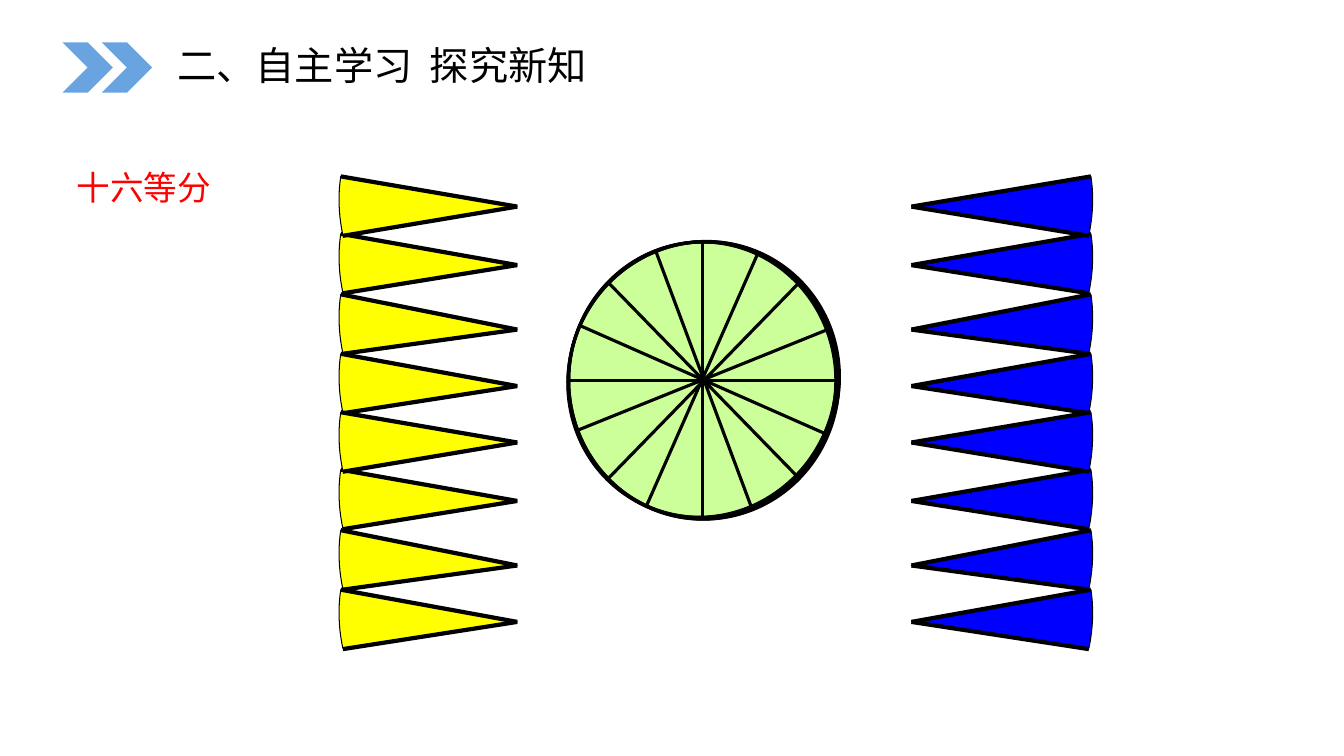
from lxml import etree
from pptx import Presentation
from pptx import util as u
from pptx.dml.color import RGBColor
from pptx.enum import shapes, text
from pptx.oxml.ns import qn

BLACK = RGBColor(0, 0, 0)
RED = RGBColor(0xFF, 0, 0)
YELLOW = RGBColor(0xFF, 0xFF, 0)
BLUE = RGBColor(0, 0, 0xFF)
GREEN = RGBColor(0xCC, 0xFF, 0x99)
SKY = RGBColor(0x69, 0xA4, 0xE1)

SECTOR_H = 0.58
HALF_H = 2.34  # four sectors
# Top of each sector within half a column, and its tip's depth below that top
SECTORS = [(0, 0.3), (0.57, 0.31), (1.17, 0.35), (1.76, 0.32)]
# Rim curve: outward offsets of its four Bezier points
RIM = (0, 0.03, 0.02, -0.02)
ARC_STEPS = 10


def paint(sp, fill=None, line=None, width=0.75):
    sp.shadow.inherit = False
    if fill is None:
        sp.fill.background()
    else:
        sp.fill.solid()
        sp.fill.fore_color.rgb = fill
    if line is None:
        sp.line.fill.background()
    else:
        sp.line.color.rgb = line
        sp.line.width = u.Pt(width)


def add_preset(parent, kind, x, y, w, h, **style):
    sp = parent.shapes.add_shape(kind, *map(u.Inches, (x, y, w, h)))
    paint(sp, **style)
    return sp


def set_text(sp, words, size, colour):
    tf = sp.text_frame
    tf.word_wrap = True
    tf.text = words
    p = tf.paragraphs[0]
    p.alignment = text.PP_ALIGN.LEFT
    r = p.runs[0]
    r.font.name = "Arial"
    r.font.size = u.Pt(size)
    r.font.color.rgb = colour
    return tf, p


def add_header(s, x, y, w, h):
    # Double chevron
    for i in range(2):
        add_preset(s, shapes.MSO_SHAPE.CHEVRON, x + i * 0.39, y, 0.5, 0.5, fill=SKY)
    # Title
    sp = s.shapes.title
    sp.left, sp.top, sp.width, sp.height = map(u.Inches, (x + 1.04, y + 0.02, w - 1.04, h))
    tf, p = set_text(sp, "二、自主学习  探究新知", 28, BLACK)
    tf.auto_size = text.MSO_AUTO_SIZE.NONE
    tf.vertical_anchor = text.MSO_ANCHOR.MIDDLE
    p.line_spacing = 0.9


def add_label(s, x, y, w, h):
    sp = s.shapes.add_textbox(*map(u.Inches, (x, y, w, h)))
    _, p = set_text(sp, "十六等分", 24, RED)
    p.line_spacing = u.Pt(45)


def add_circle(s, x, y, w, h):
    add_preset(s, shapes.MSO_SHAPE.OVAL, x, y, w, h, fill=GREEN, line=BLACK)
    # Diameters: a cross and a diagonal cross, then both turned
    g = s.shapes.add_group_shape()
    for turn, dy in ((0, 0.01), (23.8, 0)):
        for kind, cut in ((shapes.MSO_SHAPE.FLOWCHART_SUMMING_JUNCTION, 0),
                          (shapes.MSO_SHAPE.FLOWCHART_OR, 0.03)):
            sp = add_preset(g, kind, x, y + dy, w - cut, h - 0.01, line=BLACK, width=2.25)
            sp.rotation = turn


def add_edge(g, start, end):
    c = g.shapes.add_connector(shapes.MSO_CONNECTOR.STRAIGHT,
                               *map(u.Inches, (*start, *end)))
    c.line.color.rgb = BLACK
    c.line.width = u.Pt(3)
    etree.SubElement(c._element.spPr, qn("a:effectLst"))


def add_sector(g, rim_x, tip_x, top, drop, colour):
    out = 1 if rim_x > tip_x else -1
    a, b, c, d = (rim_x + out * offset for offset in RIM)
    arc = []
    for i in range(ARC_STEPS + 1):
        t = i / ARC_STEPS
        v = 1 - t
        arc.append((a * v**3 + 3 * b * v * v * t + 3 * c * v * t * t + d * t**3,
                    top + SECTOR_H * t))
    tip = (tip_x, top + drop)
    points = [(u.Inches(px), u.Inches(py)) for px, py in arc + [tip]]
    fb = g.shapes.build_freeform(*points[0])
    fb.add_line_segments(points[1:], close=True)
    paint(fb.convert_to_shape(), fill=colour, line=BLACK)
    # Thick radii
    add_edge(g, arc[0], tip)
    add_edge(g, tip, (d, top + SECTOR_H + 0.01))


def add_column(s, rim_x, tip_x, y, colour):
    g = s.shapes.add_group_shape()
    for half in range(2):
        for top, drop in reversed(SECTORS):
            add_sector(g, rim_x, tip_x, y + half * HALF_H + top, drop, colour)


def main():
    prs = Presentation()
    prs.slide_width, prs.slide_height = u.Inches(13.33), u.Inches(7.5)
    s = prs.slides.add_slide(prs.slide_layouts[5])
    add_header(s, 0.62, 0.42, 6.63, 0.46)
    add_label(s, 0.66, 1.38, 3.37, 0.73)
    add_circle(s, 5.64, 2.39, 2.68, 2.76)
    add_column(s, 10.82, 9.04, 1.75, BLUE)
    add_column(s, 3.38, 5.13, 1.75, YELLOW)
    prs.save("out.pptx")


if __name__ == "__main__":
    main()
